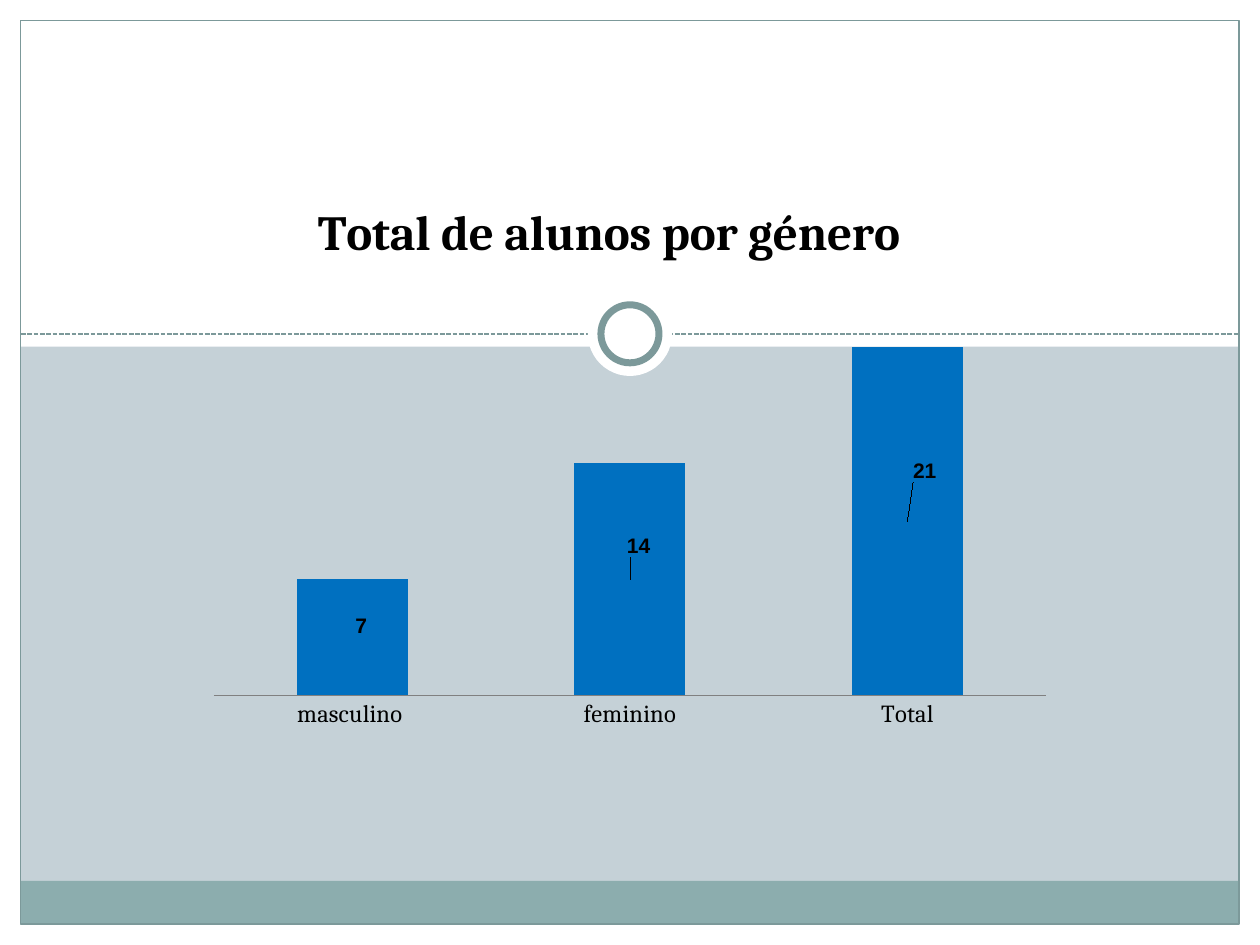
from lxml import etree
from pptx import Presentation
from pptx.chart.data import CategoryChartData
from pptx.dml.color import RGBColor
from pptx.enum.chart import XL_CHART_TYPE, XL_LABEL_POSITION, XL_TICK_MARK
from pptx.enum.dml import MSO_LINE
from pptx.enum.shapes import MSO_CONNECTOR, MSO_SHAPE
from pptx.oxml.ns import qn
from pptx.util import Cm, Pt

COLUMNS = XL_CHART_TYPE.COLUMN_CLUSTERED
CENTER = XL_LABEL_POSITION.CENTER
NO_TICK = XL_TICK_MARK.NONE
SHORT_DASH = MSO_LINE.SQUARE_DOT
STRAIGHT = MSO_CONNECTOR.STRAIGHT
RECTANGLE, OVAL = MSO_SHAPE.RECTANGLE, MSO_SHAPE.OVAL

COLORS = {
    "background": "C5D1D7",
    "white": "FFFFFF",
    "band": "8CADAE",
    "frame": "7C999A",
    "bar": "0070C0",
    "axis": "808080",
    "text": "000000",
}
FONT, LABEL_FONT = "Cambria", "Arial"
WIDTH, HEIGHT, MARGIN = 25.4, 19.05, 0.42
HEADER_HEIGHT, DIVIDER_TOP = 6.99, 6.73
CENTER_X = WIDTH / 2


def color(name):
    return RGBColor.from_string(COLORS[name])


def place(element, index, **fractions):
    """Set a manual layout, in fractions of the chart, as child number index."""
    layout = element.find(qn("c:layout"))
    if layout is None:
        layout = etree.Element(qn("c:layout"))
        element.insert(index, layout)
    manual = etree.SubElement(layout, qn("c:manualLayout"))
    for name, value in fractions.items():
        etree.SubElement(manual, qn(f"c:{name}")).set("val", str(value))


class SlideBuilder:
    def __init__(self, slide):
        self.slide = slide
        fill = slide.background.fill
        fill.solid()
        fill.fore_color.rgb = color("background")

    def style_font(self, font, size, bold=False, name=FONT):
        font.name, font.size, font.bold = name, Pt(size), bold
        font.color.rgb = color("text")

    def shape(self, kind, left, top, width, height, fill=None, line_width=None):
        shape = self.slide.shapes.add_shape(
            kind, Cm(left), Cm(top), Cm(width), Cm(height))
        shape.shadow.inherit = False
        if fill:
            shape.fill.solid()
            shape.fill.fore_color.rgb = color(fill)
        else:
            shape.fill.background()
        if line_width:
            shape.line.color.rgb = color("frame")
            shape.line.width = Pt(line_width)
        else:
            shape.line.fill.background()

    def circle(self, center_y, diameter, line_width=None):
        self.shape(OVAL, CENTER_X - diameter / 2, center_y - diameter / 2,
                   diameter, diameter, "white", line_width)

    def dashed_line(self, left, right, top):
        line = self.slide.shapes.add_connector(
            STRAIGHT, Cm(left), Cm(top), Cm(right), Cm(top))
        line.line.color.rgb = color("frame")
        line.line.width = Pt(0.9)
        line.line.dash_style = SHORT_DASH
        etree.SubElement(line._element.spPr, qn("a:effectLst"))

    def column_chart(self, left, top, width, height, title, values, offsets):
        """Draw the columns; offsets move each value label off its column's centre."""
        data = CategoryChartData()
        data.categories = list(values)
        data.add_series("Series 1", list(values.values()))
        chart = self.slide.shapes.add_chart(
            COLUMNS, Cm(left), Cm(top), Cm(width), Cm(height), data).chart
        self.style_font(chart.font, 10)
        chart.has_legend = False
        self.chart_title(chart, title)
        self.chart_axes(chart, max(values.values()))

        plot = chart.plots[0]
        plot.gap_width = 150
        plot.vary_by_categories = False
        series = plot.series[0]
        series.format.fill.solid()
        series.format.fill.fore_color.rgb = color("bar")
        for index, (value, (x, y)) in enumerate(zip(values.values(), offsets)):
            self.value_label(series.points[index].data_label, value, index > 0)
            label = series._element.xpath(f"c:dLbls/c:dLbl[c:idx/@val='{index}']")[0]
            place(label, 1, x=x, y=y)
        place(chart._chartSpace.chart.plotArea, 0, layoutTarget="inner",
              xMode="edge", yMode="edge", x=0.02, y=0.29, w=0.96, h=0.63)

    def chart_title(self, chart, text):
        chart.has_title = True
        run = chart.chart_title.text_frame.paragraphs[0].add_run()
        run.text = text
        self.style_font(run.font, 28, bold=True)
        place(chart.chart_title._element, 1, xMode="edge", yMode="edge", x=0.13, y=0.01)

    def chart_axes(self, chart, maximum):
        categories, scale = chart.category_axis, chart.value_axis
        categories.major_tick_mark = categories.minor_tick_mark = NO_TICK
        categories.format.line.color.rgb = color("axis")
        self.style_font(categories.tick_labels.font, 14)
        scale.visible = False
        scale.has_major_gridlines = False
        scale.minimum_scale, scale.maximum_scale = 0, maximum

    def value_label(self, label, value, typed):
        if typed:
            run = label.text_frame.paragraphs[0].add_run()
            run.text = str(value)
            font = run.font
        else:
            font = label.font
        self.style_font(font, 12, bold=True, name=LABEL_FONT)
        label.position = CENTER


def main():
    presentation = Presentation()
    presentation.slide_width, presentation.slide_height = Cm(WIDTH), Cm(HEIGHT)
    builder = SlideBuilder(presentation.slides.add_slide(presentation.slide_layouts[6]))

    inner_width = WIDTH - 2 * MARGIN
    builder.shape(RECTANGLE, 0, HEIGHT - MARGIN, WIDTH, MARGIN, "white")
    for left in (WIDTH - MARGIN, 0):
        builder.shape(RECTANGLE, left, 0, MARGIN, HEIGHT, "white")
    builder.shape(RECTANGLE, 0, 0, WIDTH, HEADER_HEIGHT, "white")
    builder.shape(RECTANGLE, MARGIN, 17.76, inner_width, 0.87, "band")
    builder.dashed_line(MARGIN, WIDTH - MARGIN, DIVIDER_TOP)
    builder.shape(RECTANGLE, MARGIN, MARGIN, inner_width, HEIGHT - 2 * MARGIN,
                  line_width=0.75)
    builder.circle(DIVIDER_TOP, 1.7)
    builder.circle(DIVIDER_TOP, 1.17, line_width=4)

    builder.column_chart(
        3.96, 3.76, 17.48, 11.15, "Total de alunos por género",
        {"masculino ": 7, "feminino": 14, "Total": 21},
        [(0.01, -0.02), (0.01, -0.06), (0.02, -0.09)])
    presentation.save("out.pptx")


if __name__ == "__main__":
    main()
